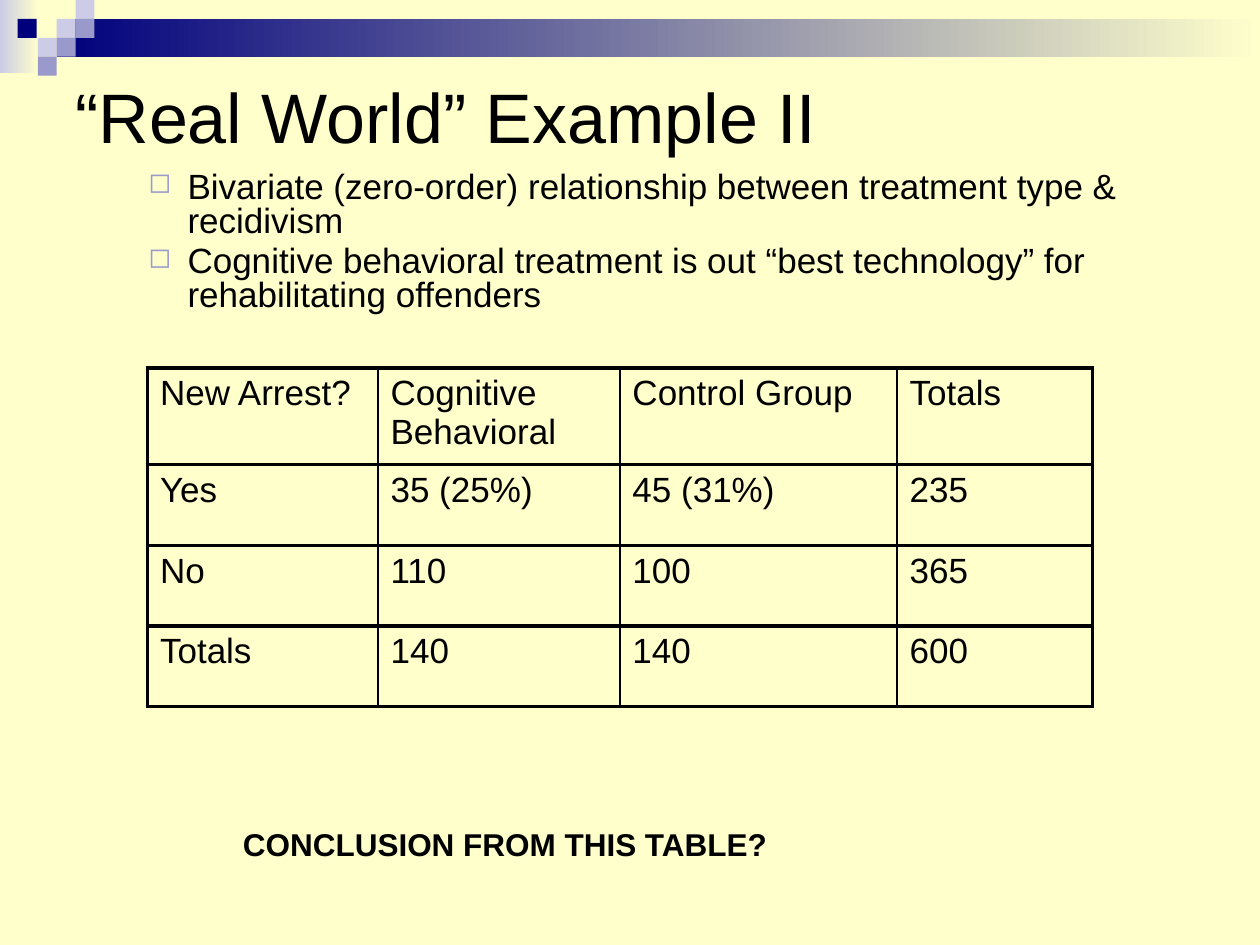
from dataclasses import dataclass

from lxml import etree
from pptx import Presentation
from pptx.dml.color import RGBColor as Color
from pptx.enum.shapes import MSO_SHAPE as Shape
from pptx.enum.text import MSO_ANCHOR as Anchor
from pptx.oxml import parse_xml
from pptx.oxml.ns import nsdecls, qn
from pptx.util import Inches, Pt


@dataclass(frozen=True)
class Theme:
    font: str = "Arial"
    cream: str = "FFFFCC"
    navy: str = "00007D"
    lilac: str = "CCCCE6"
    violet: str = "9999CC"
    ink: str = "000000"
    title: int = 40
    body: int = 20
    note: int = 18
    thick: float = 2.25
    thin: float = 1


theme = Theme()


def add_span(para, text, size, bold=False):
    span = para.add_run()
    span.text = text
    span.font.name = theme.font
    span.font.size = Pt(size)
    span.font.bold = bold
    span.font.color.rgb = Color.from_string(theme.ink)


def add_block(left, top, width, height, start, end=None):
    block = page.shapes.add_shape(
        Shape.RECTANGLE, Inches(left), Inches(top), Inches(width), Inches(height))
    block.shadow.inherit = False
    block.line.fill.background()
    if end is None:
        block.fill.solid()
        block.fill.fore_color.rgb = Color.from_string(start)
    else:
        block.fill.gradient()
        block.fill.gradient_angle = 0
        for stop, color in zip(block.fill.gradient_stops, (start, end)):
            stop.color.rgb = Color.from_string(color)


deck = Presentation()
deck.slide_width, deck.slide_height = Inches(10), Inches(7.5)
page = deck.slides.add_slide(deck.slide_layouts[6])
page.background.fill.solid()
page.background.fill.fore_color.rgb = Color.from_string(theme.cream)

# Header bands and mosaic squares
add_block(0, 0, 0.31, 0.58, theme.lilac, theme.cream)
add_block(0.45, 0.15, 9.55, 0.3, theme.navy, theme.cream)
side = 0.15
squares = [
    (0.45, 0.15, theme.lilac), (0.6, 0, theme.lilac), (0.6, 0.15, theme.violet),
    (0.3, 0.3, theme.lilac), (0.14, 0.15, theme.navy), (0.45, 0.3, theme.violet),
    (0.3, 0.45, theme.violet),
]
for left, top, color in squares:
    add_block(left, top, side, side, color)

# Title
title = page.shapes.add_textbox(Inches(0.5), Inches(0.5), Inches(9), Inches(0.84))
title.text_frame.word_wrap = True
title.text_frame.vertical_anchor = Anchor.MIDDLE
add_span(title.text_frame.paragraphs[0], "“Real World” Example II", theme.title)

# Bullets
points = [
    "Bivariate (zero-order) relationship between treatment type & recidivism",
    "Cognitive behavioral treatment is out “best technology” for rehabilitating offenders",
]
body = page.shapes.add_textbox(Inches(0.58), Inches(0.92), Inches(8.75), Inches(1.58))
frame = body.text_frame
frame.word_wrap = True
frame.margin_top = Inches(0.45)
for index, point in enumerate(points):
    para = frame.add_paragraph() if index else frame.paragraphs[0]
    para.line_spacing = 0.8
    para.space_before = Pt(4 * index)
    props = para._p.get_or_add_pPr()
    props.set("marL", str(Inches(0.81)))
    props.set("indent", str(Inches(-0.31)))
    color = etree.SubElement(props, qn("a:buClr"))
    etree.SubElement(color, qn("a:srgbClr"), val=theme.violet)
    etree.SubElement(props, qn("a:buSzPct"), val="80000")
    etree.SubElement(props, qn("a:buChar"), char="◻")
    add_span(para, point, theme.body)

# Table: thick frame and row rules, thin column rules
rows = [
    ("New Arrest?", "Cognitive Behavioral", "Control Group", "Totals"),
    ("Yes", "35 (25%)", "45 (31%)", "235"),
    ("No", "110", "100", "365"),
    ("Totals", "140", "140", "600"),
]
widths = [1.83, 1.92, 2.2, 1.55]
row_height = 0.64
table = page.shapes.add_table(
    len(rows), len(widths), Inches(1.17), Inches(2.92),
    Inches(sum(widths)), Inches(row_height * len(rows))).table
table.first_row = table.horz_banding = False
for column, width in zip(table.columns, widths):
    column.width = Inches(width)
for r, values in enumerate(rows):
    table.rows[r].height = Inches(row_height)
    for c, value in enumerate(values):
        cell = table.cell(r, c)
        para = cell.text_frame.paragraphs[0]
        para.space_before = Pt(4)
        add_span(para, value, theme.body)
        borders = {
            "lnL": theme.thin if c else theme.thick,
            "lnR": theme.thin if c < len(widths) - 1 else theme.thick,
            "lnT": theme.thick,
            "lnB": theme.thick,
        }
        for edge, weight in borders.items():
            cell._tc.get_or_add_tcPr().append(parse_xml(
                f'<a:{edge} {nsdecls("a")} w="{Pt(weight)}"><a:solidFill>'
                f'<a:srgbClr val="{theme.ink}"/></a:solidFill></a:{edge}>'))
        cell.fill.background()

# Closing question
note = page.shapes.add_textbox(Inches(1.83), Inches(6.5), Inches(4.47), Inches(0.4))
note.text_frame.word_wrap = False
add_span(note.text_frame.paragraphs[0], "CONCLUSION FROM THIS TABLE?", theme.note, bold=True)

deck.save("out.pptx")
